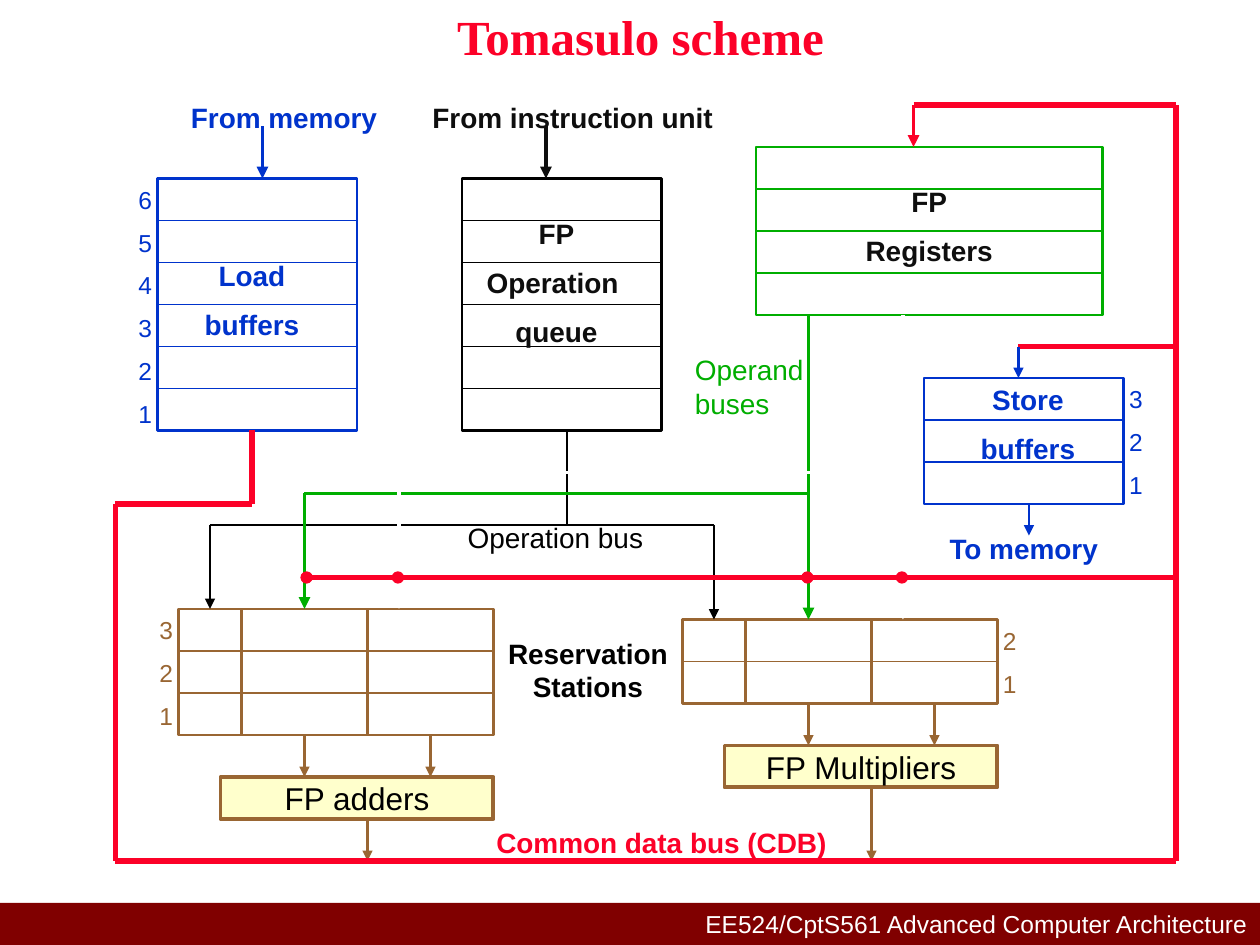
import pptx
import pptx.util
import pptx.dml.color
import pptx.enum.shapes
import pptx.enum.text
import pptx.oxml
import pptx.oxml.ns

EMU_PER_PX = 7620
ROW = 40
COLORS = {
    "white": "FFFFFF",
    "black": "000000",
    "ink": "0E0E0E",
    "blue": "0033CC",
    "green": "00AE00",
    "red": "FC0128",
    "brown": "996633",
    "cream": "FFFFCC",
    "maroon": "800000",
}
ALIGN = {
    "l": pptx.enum.text.PP_ALIGN.LEFT,
    "c": pptx.enum.text.PP_ALIGN.CENTER,
    "r": pptx.enum.text.PP_ALIGN.RIGHT,
}
SHAPES = pptx.enum.shapes.MSO_SHAPE


def px(*lengths):
    """Turn px lengths into EMU."""
    return [pptx.util.Emu(length * EMU_PER_PX) for length in lengths]


def rgb(color):
    """Look up a named colour."""
    return pptx.dml.color.RGBColor.from_string(COLORS[color])


def write(frame, lines, color, size=16, bold=False, align="c", font="Arial", gap=0.55):
    """Fill a text frame with one paragraph per line."""
    frame.text = "\n".join(lines)
    for index, paragraph in enumerate(frame.paragraphs):
        paragraph.alignment = ALIGN[align]
        paragraph.space_before = pptx.util.Pt(round(size * gap, 1) if index else 0)
        paragraph.font.name = font
        paragraph.font.size = pptx.util.Pt(size)
        paragraph.font.bold = bold
        paragraph.font.color.rgb = rgb(color)


def add_label(slide, box, lines, color, **style):
    """Add a wrapping text box."""
    frame = slide.shapes.add_textbox(*px(*box)).text_frame
    frame.word_wrap = True
    write(frame, lines, color, **style)


def add_block(slide, box, fill, line=None, weight=1.5, kind=SHAPES.RECTANGLE):
    """Add a flat filled shape."""
    block = slide.shapes.add_shape(kind, *px(*box))
    block.shadow.inherit = False
    block.fill.solid()
    block.fill.fore_color.rgb = rgb(fill)
    if line:
        block.line.color.rgb = rgb(line)
        block.line.width = pptx.util.Pt(weight)
    else:
        block.line.fill.background()
    return block


def add_wire(slide, ends, color, weight=1.5, arrow=False):
    """Add a straight line, with an arrowhead at its end if wanted."""
    wire = slide.shapes.add_connector(
        pptx.enum.shapes.MSO_CONNECTOR.STRAIGHT, *px(*ends))
    wire.line.color.rgb = rgb(color)
    wire.line.width = pptx.util.Pt(weight)
    if arrow:
        head = pptx.oxml.parse_xml(
            f'<a:tailEnd {pptx.oxml.ns.nsdecls("a")} type="triangle"/>')
        wire.line._get_or_add_ln().append(head)
    wire._element.spPr.append(
        pptx.oxml.parse_xml(f'<a:effectLst {pptx.oxml.ns.nsdecls("a")}/>'))


def add_buffer(slide, left, top, width, rows, color, dividers=()):
    """Add a box ruled into equal rows, with optional column dividers."""
    bottom = top + rows * ROW
    add_block(slide, (left, top, width, rows * ROW), "white", color)
    for row in range(1, rows):
        y = top + row * ROW
        add_wire(slide, (left, y, left + width, y), color, 1)
    for offset in dividers:
        add_wire(slide, (left + offset, top, left + offset, bottom), color)


def add_row_numbers(slide, left, top, width, rows, color, align):
    """Number buffer rows downwards to 1."""
    numbers = [str(number) for number in range(rows, 0, -1)]
    add_label(slide, (left, top, width, rows * ROW), numbers, color, size=14, align=align)


def add_unit(slide, left, top, name, inputs, output):
    """Add a functional unit with its input and output arrows."""
    unit = add_block(slide, (left, top, 260, ROW), "cream", "brown", 2.25)
    unit.text_frame.word_wrap = False
    unit.text_frame.vertical_anchor = pptx.enum.text.MSO_ANCHOR.MIDDLE
    write(unit.text_frame, [name], "black", size=18)
    for x in inputs:
        add_wire(slide, (x, top - ROW, x, top), "brown", arrow=True)
    add_wire(slide, (output, top + ROW, output, 820), "brown", arrow=True)


def add_operand_bus(slide, left, right, level, color):
    """Add one operand bus from the registers to both stations."""
    add_wire(slide, (left, level, left, 580), color, 2.25, True)
    add_wire(slide, (right, 300, right, 590), color, 2.25, True)
    add_wire(slide, (left, level, right, level), color, 2.25)


def add_title(slide):
    """Place and format the slide title."""
    title = slide.shapes.title
    title.left, title.top, title.width, title.height = px(320, 0, 580, 68)
    title.text_frame.auto_size = pptx.enum.text.MSO_AUTO_SIZE.NONE
    title.text_frame.vertical_anchor = pptx.enum.text.MSO_ANCHOR.TOP
    write(title.text_frame, ["Tomasulo scheme"], "red", size=28, bold=True,
          font="Times New Roman")


def add_footer(slide):
    """Add the course band."""
    add_block(slide, (0, 860, 1200, 40), "maroon")
    add_label(slide, (480, 860, 720, 40), ["EE524/CptS561 Advanced Computer Architecture"],
              "white", size=14, align="r")


def add_storage(slide):
    """Add buffers, queue, registers and reservation stations."""
    add_buffer(slide, 150, 170, 190, 6, "blue")
    add_buffer(slide, 440, 170, 190, 6, "black")
    add_buffer(slide, 720, 140, 330, 4, "green")
    add_buffer(slide, 880, 360, 190, 3, "blue")
    add_buffer(slide, 170, 580, 300, 3, "brown", (60, 180))
    add_buffer(slide, 650, 590, 300, 2, "brown", (60, 180))
    add_row_numbers(slide, 120, 170, 220, 6, "blue", "l")
    add_row_numbers(slide, 880, 360, 220, 3, "blue", "r")
    add_row_numbers(slide, 140, 580, 320, 3, "brown", "l")
    add_row_numbers(slide, 660, 590, 320, 2, "brown", "r")


def add_buses(slide):
    """Add the operation, operand and common data buses."""
    add_wire(slide, (200, 500, 200, 580), "black", arrow=True)
    add_wire(slide, (680, 500, 680, 590), "black", arrow=True)
    add_wire(slide, (200, 500, 680, 500), "black")
    add_wire(slide, (540, 410, 540, 500), "black")
    add_operand_bus(slide, 290, 770, 470, "green")
    add_operand_bus(slide, 380, 860, 450, "white")
    for ends in ((110, 820, 1120, 820), (110, 820, 110, 480), (110, 480, 240, 480),
                 (240, 480, 240, 410), (1120, 820, 1120, 100), (870, 100, 1120, 100),
                 (970, 330, 1120, 330), (290, 550, 1120, 550)):
        add_wire(slide, ends, "red", 3)
    for x in (292, 379, 769, 859):
        add_block(slide, (x - 5, 545, 10, 10), "red", "red", 1, SHAPES.OVAL)
    add_wire(slide, (870, 100, 870, 140), "red", 2.25, True)
    add_wire(slide, (250, 120, 250, 170), "blue", 2.25, True)
    add_wire(slide, (520, 120, 520, 170), "ink", 2.25, True)
    add_wire(slide, (970, 330, 970, 360), "blue", arrow=True)
    add_wire(slide, (980, 480, 980, 510), "blue", arrow=True)


def add_captions(slide):
    """Name the parts and the buses."""
    for box, lines, color, align in (
            ((170, 90, 220, 44), ["From memory"], "blue", "l"),
            ((400, 90, 310, 44), ["From instruction unit"], "ink", "l"),
            ((150, 240, 180, 92), ["Load", "buffers"], "blue", "c"),
            ((440, 200, 180, 140), ["FP", "Operation ", "queue"], "ink", "c"),
            ((780, 170, 210, 92), ["FP", "Registers"], "ink", "c"),
            ((889, 358, 180, 92), ["Store", "buffers"], "blue", "c"),
            ((880, 500, 190, 44), ["To memory"], "blue", "c"),
            ((430, 780, 400, 44), ["Common data bus (CDB)"], "red", "c")):
        add_label(slide, box, lines, color, bold=True, align=align)
    add_label(slide, (470, 600, 180, 77), ["Reservation ", "Stations"], "black",
              bold=True, gap=0)
    add_label(slide, (420, 490, 218, 44), ["Operation bus"], "black")
    add_label(slide, (650, 330, 200, 77), ["Operand buses"], "green", align="l")


def main():
    """Build and save the slide."""
    deck = pptx.Presentation()
    deck.slide_width, deck.slide_height = px(1200, 900)
    slide = deck.slides.add_slide(deck.slide_layouts[5])
    add_footer(slide)
    add_storage(slide)
    add_unit(slide, 210, 740, "FP adders", (290, 410), 350)
    add_unit(slide, 690, 710, "FP Multipliers", (770, 890), 830)
    add_buses(slide)
    add_captions(slide)
    add_title(slide)
    deck.save("out.pptx")


if __name__ == "__main__":
    main()
